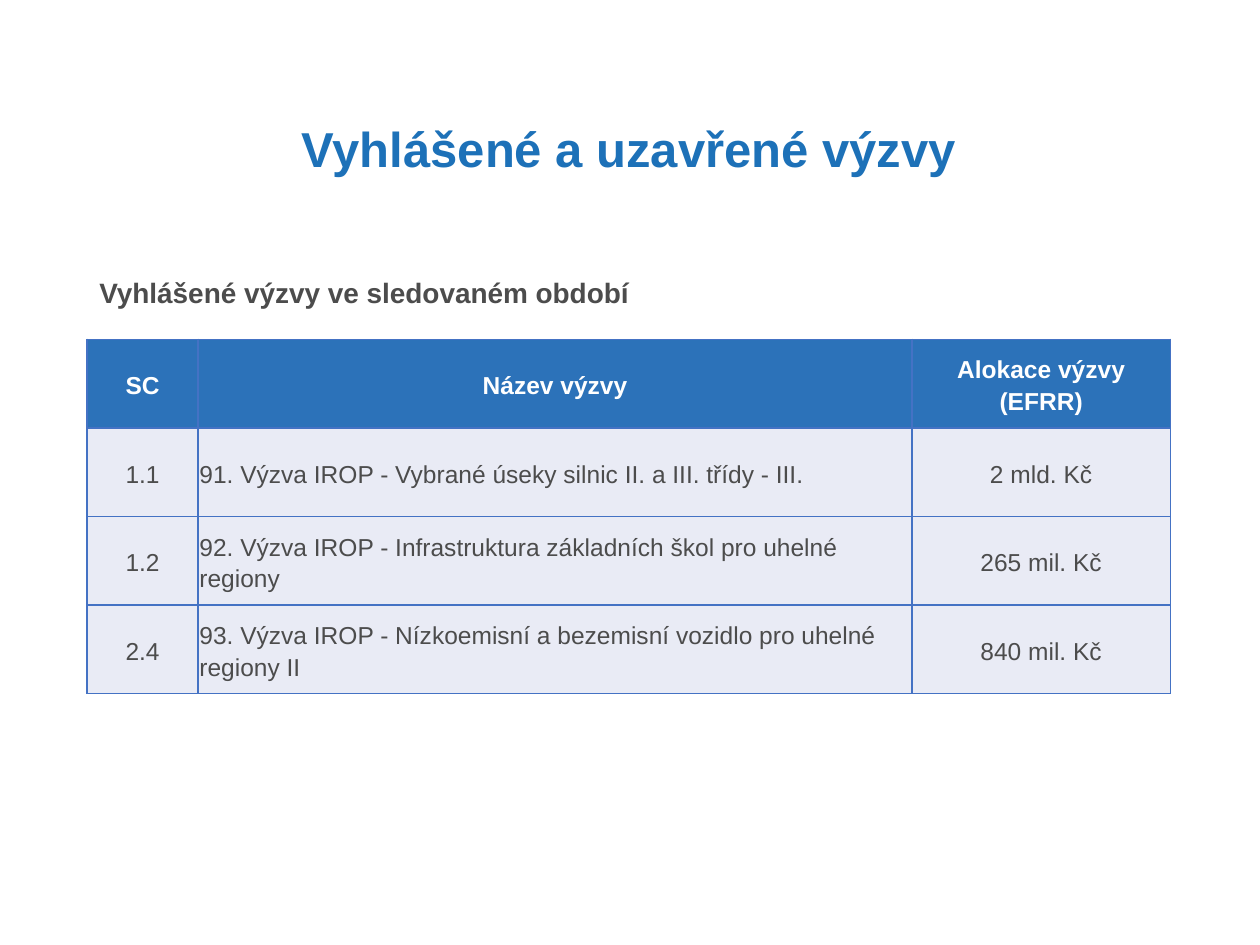
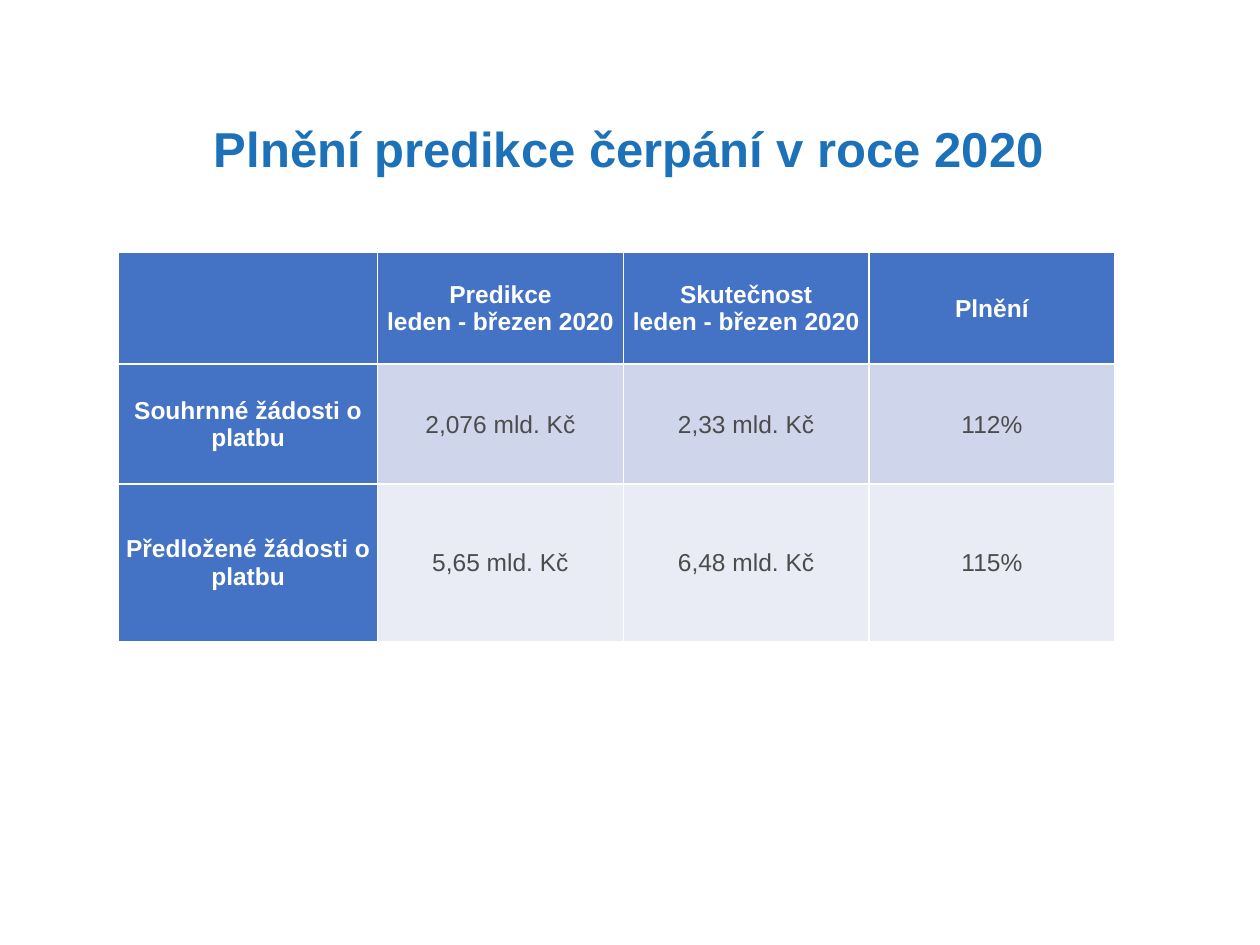
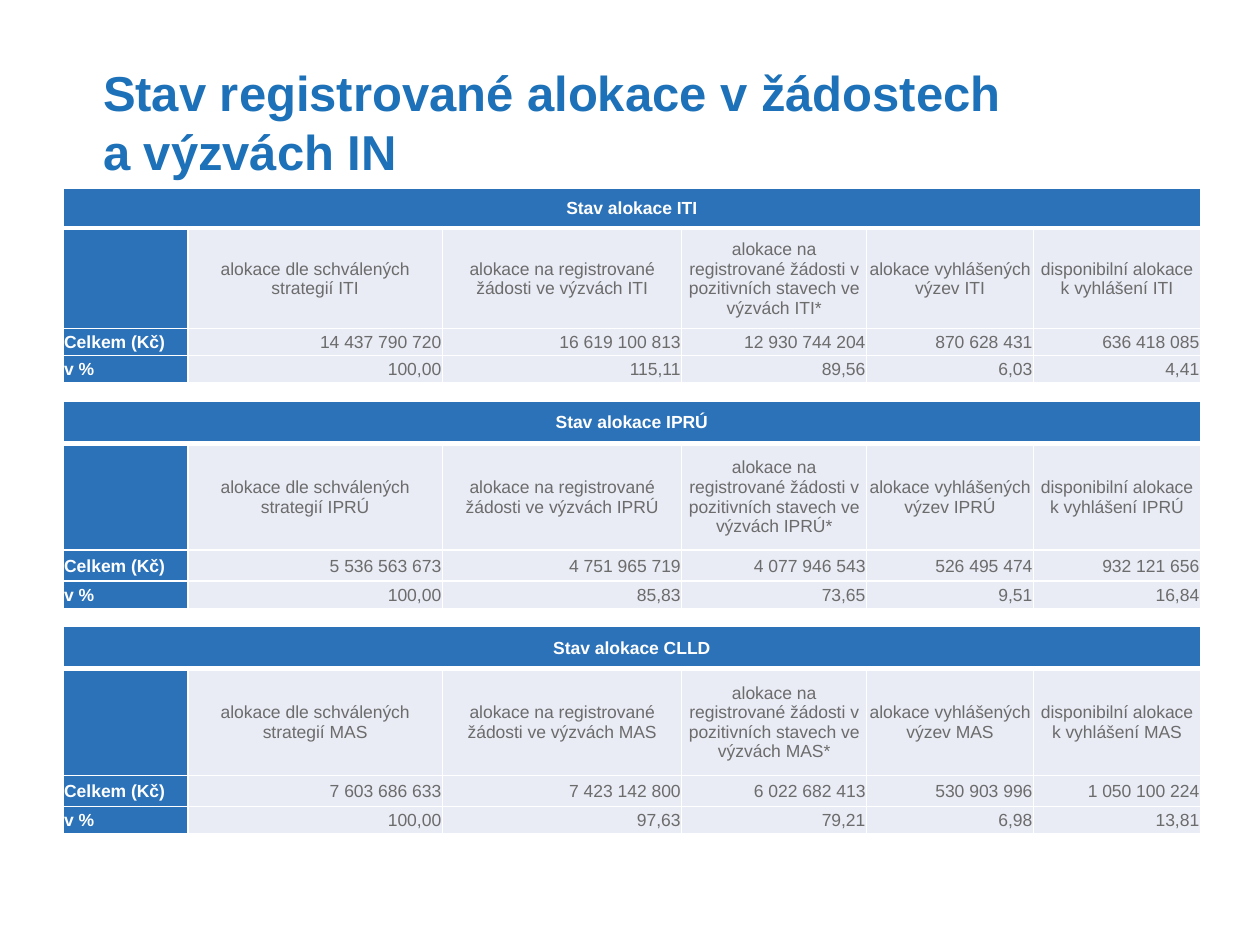
import pptx
import pptx.util
import pptx.dml.color
import pptx.enum.text
import pptx.oxml
import pptx.oxml.ns

Pt = pptx.util.Pt
RGBColor = pptx.dml.color.RGBColor
ALIGN = pptx.enum.text.PP_ALIGN
ANCHOR = pptx.enum.text.MSO_ANCHOR

# Shared look
FONT = "Arial"
TITLE = RGBColor(0x1D, 0x71, 0xB8)
HEAD = RGBColor(0x2C, 0x72, 0xB9)
BLUE = RGBColor(0x44, 0x72, 0xC4)
LIGHT = RGBColor(0xE9, 0xEB, 0xF5)
BAND = RGBColor(0xCF, 0xD5, 0xEA)
DARK = RGBColor(0x4C, 0x4C, 0x4C)
GREY = RGBColor(0x6C, 0x6C, 0x6C)
WHITE = RGBColor(0xFF, 0xFF, 0xFF)
TITLE_BOX = (49.7, 28.8, 619.2, 115.2)

# Content
CALLS = [
    ["SC", "Název výzvy", "Alokace výzvy (EFRR)"],
    ["1.1", "91. Výzva IROP - Vybrané úseky silnic II. a III. třídy - III.", "2 mld. Kč"],
    ["1.2", "92. Výzva IROP - Infrastruktura základních škol pro uhelné regiony", "265 mil. Kč"],
    ["2.4", "93. Výzva IROP - Nízkoemisní a bezemisní vozidlo pro uhelné regiony II", "840 mil. Kč"],
]
PLAN = [
    ["", "Predikce\nleden - březen 2020", "Skutečnost\nleden - březen 2020", "Plnění"],
    ["Souhrnné žádosti o platbu", "2,076 mld. Kč", "2,33 mld. Kč", "112%"],
    ["Předložené žádosti o platbu", "5,65 mld. Kč", "6,48 mld. Kč", "115%"],
]
LABELS = [
    "alokace dle schválených strategií {}",
    "alokace na registrované žádosti ve výzvách {}",
    "alokace na registrované žádosti v pozitivních stavech ve výzvách {}*",
    "alokace vyhlášených výzev {}",
    "disponibilní alokace k vyhlášení {}",
]
COLS = [71.3, 145.5, 136.8, 105.6, 95.4, 95.4]
TALL = [24.3, 61, 17.8, 15.7]
# Top, row heights, tool, name in labels, totals, shares
STATES = [
    (107.3, [23.1, 57.5, 15.2, 15.8], "ITI", "ITI",
     ["14 437 790 720", "16 619 100 813", "12 930 744 204", "870 628 431", "636 418 085"],
     ["100,00", "115,11", "89,56", "6,03", "4,41"]),
    (229, TALL, "IPRÚ", "IPRÚ",
     ["5 536 563 673", "4 751 965 719", "4 077 946 543", "526 495 474", "932 121 656"],
     ["100,00", "85,83", "73,65", "9,51", "16,84"]),
    (357.8, TALL, "CLLD", "MAS",
     ["7 603 686 633", "7 423 142 800", "6 022 682 413", "530 903 996", "1 050 100 224"],
     ["100,00", "97,63", "79,21", "6,98", "13,81"]),
]


def write(frame, text, size=14, color=DARK, bold=False, align=ALIGN.CENTER, lead=1.0):
    frame.word_wrap = True
    frame.text = text
    for para in frame.paragraphs:
        para.alignment = align
        para.line_spacing = lead
        for run in para.runs:
            font = run.font
            font.name, font.size, font.bold = FONT, Pt(size), bold
            font.color.rgb = color


def label(slide, box, text, anchor=ANCHOR.TOP, **form):
    shape = slide.shapes.add_textbox(*map(Pt, box))
    write(shape.text_frame, text, **form)
    shape.text_frame.vertical_anchor = anchor


def title(slide, text):
    label(slide, TITLE_BOX, text, anchor=ANCHOR.MIDDLE,
          size=28, color=TITLE, bold=True, lead=0.9)


def edge(cell, color, top, bottom):
    """Draw the four borders, one point wide at the sides."""
    props = cell._tc.get_or_add_tcPr()
    widths = {"lnL": 1, "lnR": 1, "lnT": top, "lnB": bottom}
    for spot, (tag, width) in enumerate(widths.items()):
        props.insert(spot, pptx.oxml.parse_xml(
            f'<a:{tag} {pptx.oxml.ns.nsdecls("a")} w="{Pt(width)}">'
            f'<a:solidFill><a:srgbClr val="{color}"/></a:solidFill></a:{tag}>'))


def grid(slide, left, top, cols, rows, data, style, line=WHITE, rule=1):
    """Build a table; style(row, col) gives a fill and text format,
    rule is the width of the line under the first row."""
    frame = slide.shapes.add_table(len(rows), len(cols), Pt(left), Pt(top),
                                   Pt(sum(cols)), Pt(sum(rows)))
    table = frame.table
    table.first_row = table.horz_banding = False
    for col, width in zip(table.columns, cols):
        col.width = Pt(width)
    for row, height in zip(table.rows, rows):
        row.height = Pt(height)
    for r, texts in enumerate(data):
        for c, text in enumerate(texts):
            cell = table.cell(r, c)
            fill, form = style(r, c)
            cell.margin_left = cell.margin_right = cell.margin_top = Pt(0.7)
            cell.margin_bottom = Pt(0)
            cell.vertical_anchor = ANCHOR.MIDDLE
            cell.fill.solid()
            cell.fill.fore_color.rgb = fill
            edge(cell, line, rule if r == 1 else 1, rule if r == 0 else 1)
            if text:
                write(cell.text_frame, text, **form)
    return table


# Announced calls
def calls(slide):
    def style(r, c):
        if r == 0:
            return HEAD, dict(color=WHITE, bold=True, lead=1.15)
        return LIGHT, dict(align=ALIGN.LEFT if c == 1 else ALIGN.CENTER, lead=1.15)

    title(slide, "Vyhlášené a uzavřené výzvy")
    label(slide, (49.7, 154.1, 619.2, 322.6), "Vyhlášené výzvy ve sledovaném období",
          size=16, bold=True, align=ALIGN.LEFT)
    grid(slide, 49.7, 193.9, [63.6, 407.8, 147.8], [50.6] * 4, CALLS, style, line=BLUE)


# Forecast against fact
def plan(slide):
    def style(r, c):
        if r == 0 or c == 0:
            return BLUE, dict(color=WHITE, bold=True)
        return (BAND if r == 1 else LIGHT), {}

    title(slide, "Plnění predikce čerpání v roce 2020")
    grid(slide, 67.8, 144, [148] + [140.4] * 3, [64, 68.5, 90], PLAN, style, rule=1.5)


# Allocation by tool
def state(slide, top, rows, tool, name, sums, parts):
    def style(r, c):
        if r == 0 or c == 0:
            side = ALIGN.LEFT if r else ALIGN.CENTER
            return HEAD, dict(size=10, color=WHITE, bold=True, align=side)
        side = ALIGN.CENTER if r == 1 else ALIGN.RIGHT
        return LIGHT, dict(size=10, color=GREY, align=side)

    data = [
        [f"Stav alokace {tool}"] + [""] * 5,
        [""] + [text.format(name) for text in LABELS],
        ["Celkem (Kč)"] + sums,
        ["v %"] + parts,
    ]
    table = grid(slide, 36, top, COLS, rows, data, style, rule=3)
    table.cell(0, 0).merge(table.cell(0, 5))


def states(slide):
    label(slide, (51.8, 32.4, 618.5, 74.9),
          "Stav registrované alokace v žádostech \va výzvách IN",
          size=28, color=TITLE, bold=True, align=ALIGN.LEFT)
    for item in STATES:
        state(slide, *item)


def main():
    deck = pptx.Presentation()
    deck.slide_width, deck.slide_height = Pt(720), Pt(540)
    for build in (calls, plan, states):
        build(deck.slides.add_slide(deck.slide_layouts[6]))
    deck.save("out.pptx")


if __name__ == "__main__":
    main()
